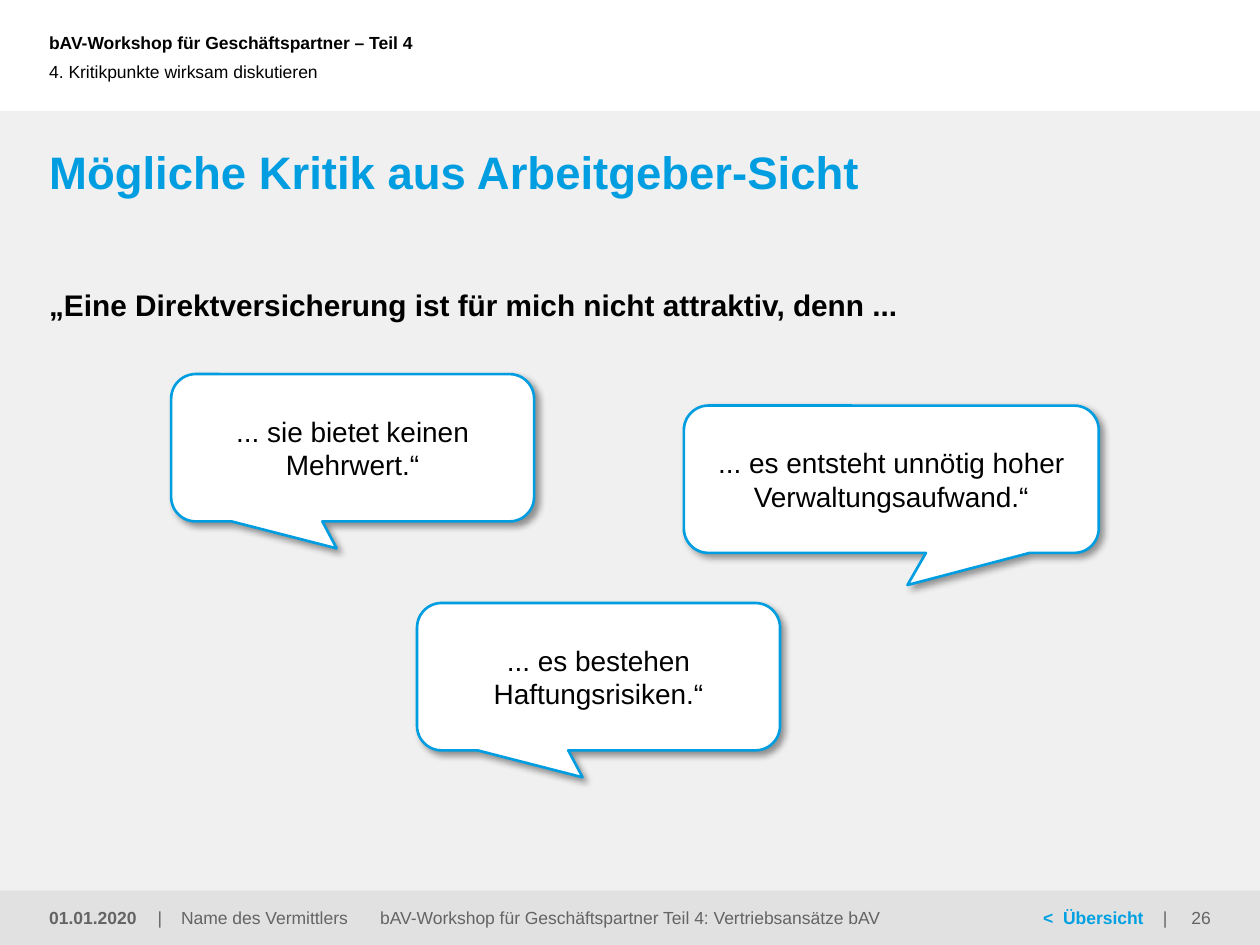
import pptx
import pptx.util
import pptx.dml.color
import pptx.enum.shapes
import pptx.enum.text
import pptx.oxml
import pptx.oxml.ns

Pt = pptx.util.Pt
ALIGN = pptx.enum.text.PP_ALIGN
SHAPE = pptx.enum.shapes.MSO_SHAPE
ANCHOR = pptx.enum.text.MSO_ANCHOR

# Content
COLORS = {"blue": "009EE0", "link": "00A0E1", "black": "000000", "white": "FFFFFF",
          "gray": "646464", "panel": "F0F0F0", "bar": "E1E1E1"}
WIDE, HIGH = 720, 540
EDGE = 28.08
FOOT = (509, 31)  # top, height of the footer

BANDS = [(63.36, HIGH - 63.36, "panel"), (FOOT[0], FOOT[1], "bar")]

# left, top, width, height, text, size, color, bold, align, anchor
LABELS = [
    (EDGE, 0, 474, 62 - 13.76, "bAV-Workshop für Geschäftspartner – Teil 4",
     10, "black", True, ALIGN.LEFT, ANCHOR.MIDDLE),
    (EDGE, 18, 486, 45.36, "4. Kritikpunkte wirksam diskutieren",
     10, "black", False, ALIGN.LEFT, ANCHOR.MIDDLE),
    (EDGE, 82, 664, 39.6, "Mögliche Kritik aus Arbeitgeber-Sicht",
     26, "blue", True, ALIGN.LEFT, ANCHOR.TOP),
    (EDGE, 164, 664, 21, "„Eine Direktversicherung ist für mich nicht attraktiv, denn ...",
     17, "black", True, ALIGN.LEFT, ANCHOR.TOP),
    (EDGE, *FOOT[:1], 59, FOOT[1], "01.01.2020",
     10, "gray", True, ALIGN.LEFT, ANCHOR.MIDDLE),
    (205.2, *FOOT[:1], 309.6, FOOT[1],
     "bAV-Workshop für Geschäftspartner Teil 4: Vertriebsansätze bAV",
     10, "gray", False, ALIGN.CENTER, ANCHOR.MIDDLE),
    (652, *FOOT[:1], WIDE - EDGE - 652, FOOT[1], "26",
     10, "gray", False, ALIGN.RIGHT, ANCHOR.MIDDLE),
]

# left, width, tab stops, runs of (text, color, bold)
TABBED = [
    (90, 112, [13.5], [("|\tName des Vermittlers", "gray", False)]),
    (596, 74, [11.5, 68.5], [("<\tÜbersicht", "link", True), ("\t|", "gray", False)]),
]

# left, top, width, tip x, tip y, text
BUBBLES = [
    (97.8, 213.8, 207.4, -0.044, 0.683, "... sie bietet keinen Mehrwert.“"),
    (390.8, 231.8, 237.1, 0.039, 0.718,
     "... es entsteht unnötig hoher Verwaltungsaufwand.“"),
    (238.3, 344.6, 207.4, -0.044, 0.683, "... es bestehen Haftungsrisiken.“"),
]
TALL = 84.2

SHADOW = ('<a:effectLst xmlns:a="http://schemas.openxmlformats.org/drawingml/2006/main">'
          '<a:outerShdw blurRad="50800" dist="38100" dir="2700000" algn="tl" rotWithShape="0">'
          '<a:srgbClr val="000000"><a:alpha val="40000"/></a:srgbClr>'
          '</a:outerShdw></a:effectLst>')


def tint(name):
    return pptx.dml.color.RGBColor.from_string(COLORS[name])


def style(font, size, color, bold=False):
    font.name = "Arial"
    font.size = Pt(size)
    font.bold = bold
    font.color.rgb = tint(color)


def add_box(left, top, width, height, anchor):
    box = slide.shapes.add_textbox(Pt(left), Pt(top), Pt(width), Pt(height))
    frame = box.text_frame
    frame.word_wrap = True
    frame.vertical_anchor = anchor
    frame.margin_left = frame.margin_right = 0
    frame.margin_top = frame.margin_bottom = 0
    return frame.paragraphs[0]


def add_form(kind, left, top, width, height, color):
    form = slide.shapes.add_shape(kind, Pt(left), Pt(top), Pt(width), Pt(height))
    form.shadow.inherit = False
    form.fill.solid()
    form.fill.fore_color.rgb = tint(color)
    return form


deck = pptx.Presentation()
deck.slide_width, deck.slide_height = Pt(WIDE), Pt(HIGH)
slide = deck.slides.add_slide(deck.slide_layouts[6])

# Background bands
for top, height, color in BANDS:
    add_form(SHAPE.RECTANGLE, 0, top, WIDE, height, color).line.fill.background()

# Header, title, lead and footer texts
for left, top, width, height, text, size, color, bold, align, anchor in LABELS:
    para = add_box(left, top, width, height, anchor)
    para.text = text
    para.alignment = align
    style(para.font, size, color, bold)

# Footer parts spaced by tab stops
for left, width, stops, runs in TABBED:
    para = add_box(left, FOOT[0], width, FOOT[1], ANCHOR.MIDDLE)
    tabs = pptx.oxml.ns.qn("a:tabLst")
    tabs = para._p.get_or_add_pPr().makeelement(tabs, {})
    for stop in stops:
        tab = tabs.makeelement(pptx.oxml.ns.qn("a:tab"),
                               {"pos": str(int(Pt(stop))), "algn": "l"})
        tabs.append(tab)
    para._p.get_or_add_pPr().append(tabs)
    for text, color, bold in runs:
        run = para.add_run()
        run.text = text
        style(run.font, 10, color, bold)

# Speech bubbles
for left, top, width, tip_x, tip_y, text in BUBBLES:
    bubble = add_form(SHAPE.ROUNDED_RECTANGULAR_CALLOUT, left, top, width, TALL, "white")
    for spot, value in enumerate((tip_x, tip_y, 0.167)):
        bubble.adjustments[spot] = value
    bubble.line.color.rgb = tint("blue")
    bubble.line.width = Pt(1.5)
    props = bubble._element.spPr
    props.replace(props.find(pptx.oxml.ns.qn("a:effectLst")), pptx.oxml.parse_xml(SHADOW))
    frame = bubble.text_frame
    frame.word_wrap = True
    frame.vertical_anchor = ANCHOR.MIDDLE
    para = frame.paragraphs[0]
    para.text = text
    para.alignment = ALIGN.CENTER
    style(para.font, 16, "black")

deck.save("out.pptx")
